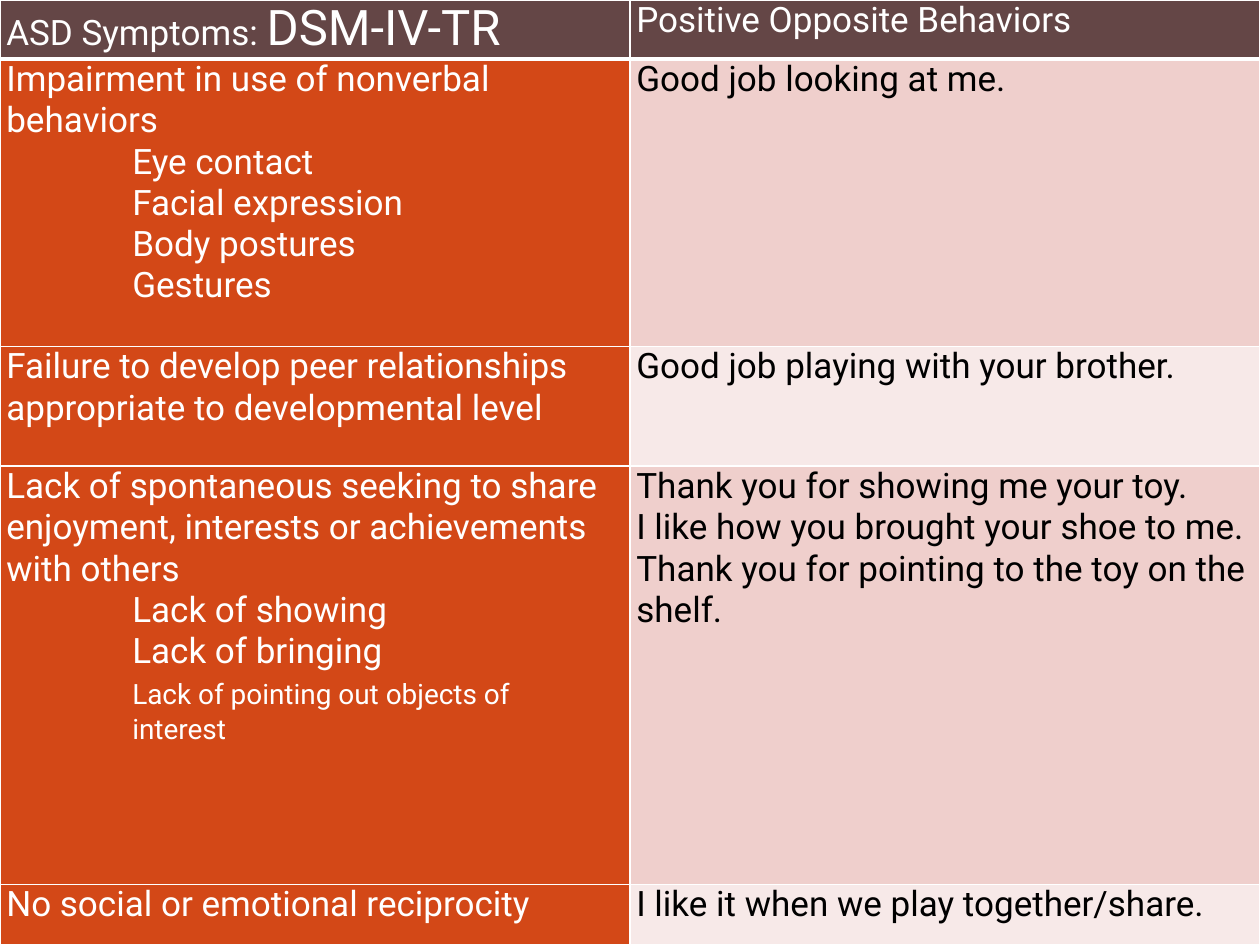
from lxml.etree import SubElement
from pptx import Presentation
from pptx.dml.color import RGBColor
from pptx.oxml.ns import qn
from pptx.util import Inches, Pt

FONT = "Roboto"
COLORS = {
    "white": "FFFFFF", "black": "000000", "header": "644646",
    "symptom": "D34817", "band_dark": "EFCFCC", "band_light": "F7E9E8",
}
COLUMN_WIDTHS = [5, 5]
ROW_HEIGHTS = [0.47, 2.28, 0.95, 3.32, 0.48]

# A paragraph is (text, indent level, size in points).
ROWS = [
    ([("ASD Symptoms: ", 0, 20)],
     [("Positive Opposite Behaviors", 0, 20)]),
    ([("Impairment in use of nonverbal behaviors", 0, 20),
      ("Eye contact", 1, 20),
      ("Facial expression", 1, 20),
      ("Body postures", 1, 20),
      ("Gestures", 1, 20)],
     [("Good job looking at me.", 0, 20)]),
    ([("Failure to develop peer relationships appropriate to "
       "developmental level", 0, 20)],
     [("Good job playing with your brother.", 0, 20)]),
    ([("Lack of spontaneous seeking to share enjoyment, interests or "
       "achievements with others", 0, 20),
      ("Lack of showing", 1, 20),
      ("Lack of bringing", 1, 20),
      ("Lack of pointing out objects of", 1, 16),
      ("interest", 1, 16)],
     [("Thank you for showing me your toy.", 0, 20),
      ("I like how you brought your shoe to me.", 0, 20),
      ("Thank you for pointing to the toy on the shelf.", 0, 20)]),
    ([("No social or emotional reciprocity", 0, 20)],
     [("I like it when we play together/share.", 0, 20)]),
]


def rgb(name):
    return RGBColor.from_string(COLORS[name])


def set_borders(cell, bottom=1):
    tcPr = cell._tc.get_or_add_tcPr()
    widths = {"a:lnL": 1, "a:lnR": 1, "a:lnT": 1, "a:lnB": bottom}
    for i, (tag, width) in enumerate(widths.items()):
        ln = SubElement(tcPr, qn(tag), w=str(Pt(width)))
        fill = SubElement(ln, qn("a:solidFill"))
        SubElement(fill, qn("a:srgbClr"), val=COLORS["white"])
        tcPr.insert(i, ln)  # borders come before the cell fill


def fill_cell(cell, paragraphs, fill, color):
    cell.margin_left = cell.margin_right = Inches(0.05)
    cell.margin_top = cell.margin_bottom = 0
    cell.fill.solid()
    cell.fill.fore_color.rgb = rgb(fill)
    tf = cell.text_frame
    previous_size = None
    for i, (text, level, size) in enumerate(paragraphs):
        p = tf.paragraphs[0] if i == 0 else tf.add_paragraph()
        p.add_run().text = text
        p.font.name = FONT
        p.font.size = Pt(size)
        p.font.bold = False
        p.font.color.rgb = rgb(color)
        if level:
            p._p.get_or_add_pPr().set("marL", str(Inches(level)))
        if previous_size and size < previous_size:
            p.space_before = Pt(4)
            p.space_after = Pt(1)
        previous_size = size


def add_symptom_table(s, left, top, width, height):
    table = s.shapes.add_table(len(ROWS), len(COLUMN_WIDTHS),
                               left, top, width, height).table
    for column, w in zip(table.columns, COLUMN_WIDTHS):
        column.width = Inches(w)
    for i, (row, h) in enumerate(zip(ROWS, ROW_HEIGHTS)):
        table.rows[i].height = Inches(h)
        band = "band_dark" if i % 2 else "band_light"
        styles = [("symptom", "white"), (band, "black")]
        if i == 0:
            styles = [("header", "white")] * 2
        for j, (paragraphs, (fill, color)) in enumerate(zip(row, styles)):
            cell = table.cell(i, j)
            fill_cell(cell, paragraphs, fill, color)
            set_borders(cell, bottom=3 if i == 0 else 1)

    r = table.cell(0, 0).text_frame.paragraphs[0].add_run()
    r.text = "DSM-IV-TR"
    r.font.size = Pt(28)


def main():
    prs = Presentation()
    prs.slide_width, prs.slide_height = Inches(10), Inches(7.5)
    s = prs.slides.add_slide(prs.slide_layouts[6])
    add_symptom_table(s, 0, 0, prs.slide_width, prs.slide_height)
    prs.save("out.pptx")


if __name__ == "__main__":
    main()
